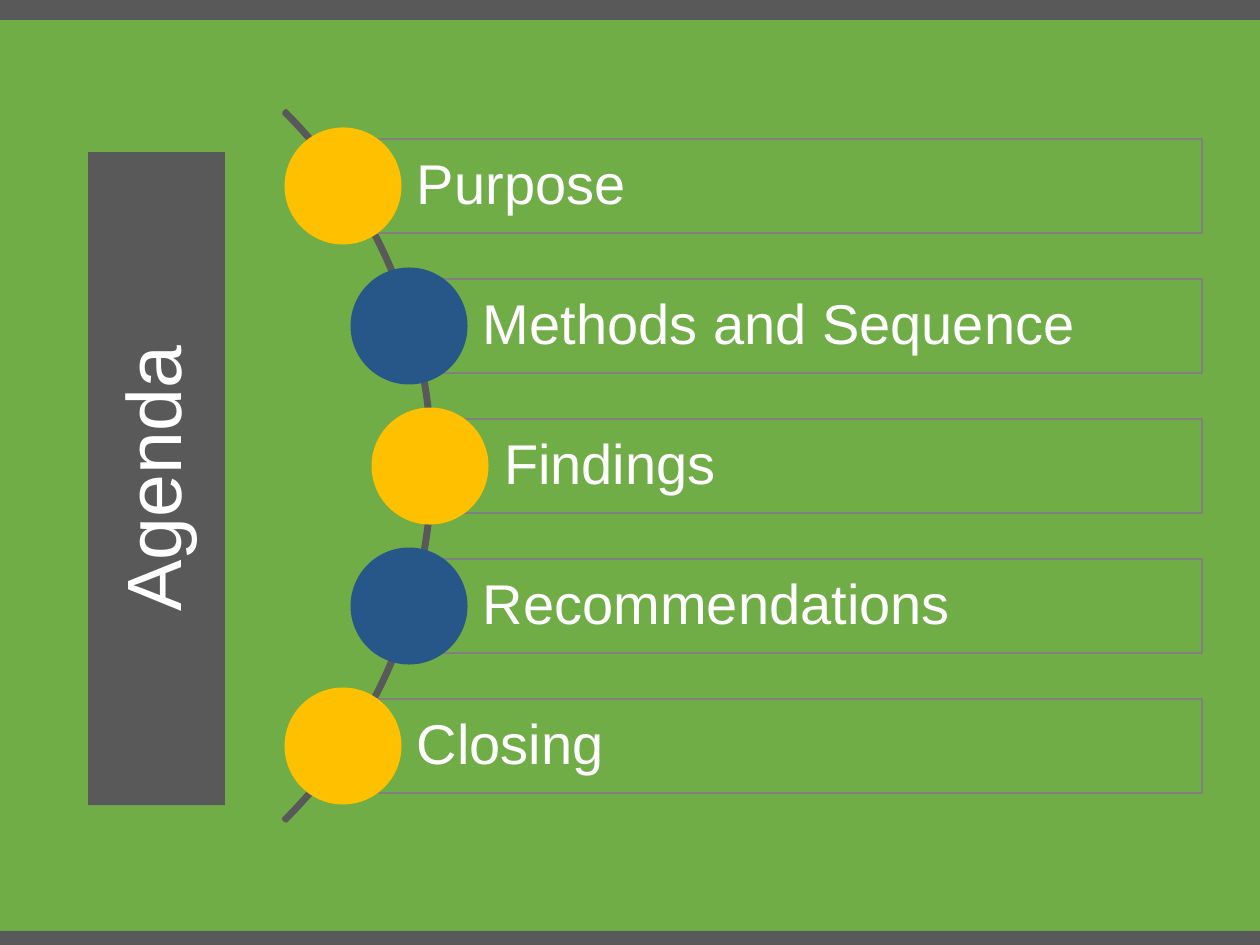
from pptx import Presentation
from pptx.dml.color import RGBColor
from pptx.enum.shapes import MSO_SHAPE as Geo
from pptx.enum.text import MSO_ANCHOR as Anchor, MSO_AUTO_SIZE as Fit, PP_ALIGN as Align
from pptx.util import Emu, Pt

SCALE = 914400 / 126
GREEN, GREY, EDGE = "70AD47", "595959", "808080"
GOLD, BLUE, WHITE = "FFC000", "275789", "FFFFFF"

# Topic, left edge of its box, colour of its dot
TOPICS = [
    ("Purpose", 343, GOLD),
    ("Methods and Sequence", 409, BLUE),
    ("Findings", 430, GOLD),
    ("Recommendations", 409, BLUE),
    ("Closing", 343, GOLD),
]
MID, STEP, RIGHT = 186, 140, 1202
BOX, DOT = 94, 117


def px(n):
    return Emu(round(n * SCALE))


def paint(fill, color):
    fill.solid()
    fill.fore_color.rgb = RGBColor.from_string(color)


def place(shape, x, y, w, h):
    shape.left, shape.top, shape.width, shape.height = map(px, (x, y, w, h))


def draw(slide, kind, x, y, w, h, fill=None, line=None, width=1):
    shape = slide.shapes.add_shape(kind, *map(px, (x, y, w, h)))
    shape.shadow.inherit = False
    if fill:
        paint(shape.fill, fill)
    else:
        shape.fill.background()
    if line:
        paint(shape.line.fill, line)
        shape.line.width = Pt(width)
    else:
        shape.line.fill.background()
    return shape


def write(shape, text, size, align):
    frame = shape.text_frame
    frame.word_wrap = True
    frame.auto_size = Fit.NONE
    frame.vertical_anchor = Anchor.MIDDLE
    para = frame.paragraphs[0]
    para.alignment = align
    para.line_spacing = 0.9
    run = para.add_run()
    run.text = text
    run.font.name = "Arial"
    run.font.size = Pt(size)
    run.font.color.rgb = RGBColor.from_string(WHITE)


def add_title(slide, text):
    title = slide.shapes.title
    place(title, -170, 410, 653, 137)
    title.rotation = 270
    paint(title.fill, GREY)
    write(title, text, 44, Align.CENTER)


def add_arc(slide):
    arc = draw(slide, Geo.BLOCK_ARC, -571, -36, 1004, 1004, line=GREY, width=2.25)
    for i, value in enumerate((189, 27, 0.003)):
        arc.adjustments[i] = value


def add_topic(slide, text, x, mid, color):
    box = draw(slide, Geo.RECTANGLE, x, mid - BOX / 2, RIGHT - x, BOX, line=EDGE)
    frame = box.text_frame
    frame.margin_left = px(74)
    frame.margin_top = frame.margin_right = frame.margin_bottom = px(11)
    write(box, text, 32, Align.LEFT)
    draw(slide, Geo.OVAL, x - DOT / 2, mid - DOT / 2, DOT, DOT, fill=color)


def main():
    deck = Presentation()
    deck.slide_width, deck.slide_height = px(1260), px(945)
    slide = deck.slides.add_slide(deck.slide_layouts[5])
    paint(slide.background.fill, GREEN)
    draw(slide, Geo.RECTANGLE, 0, 0, 1260, 20, fill=GREY)
    draw(slide, Geo.RECTANGLE, 0, 931, 1260, 14, fill=GREY)
    add_title(slide, "Agenda")
    add_arc(slide)
    for i, (text, x, color) in enumerate(TOPICS):
        add_topic(slide, text, x, MID + i * STEP, color)
    deck.save("out.pptx")


if __name__ == "__main__":
    main()
